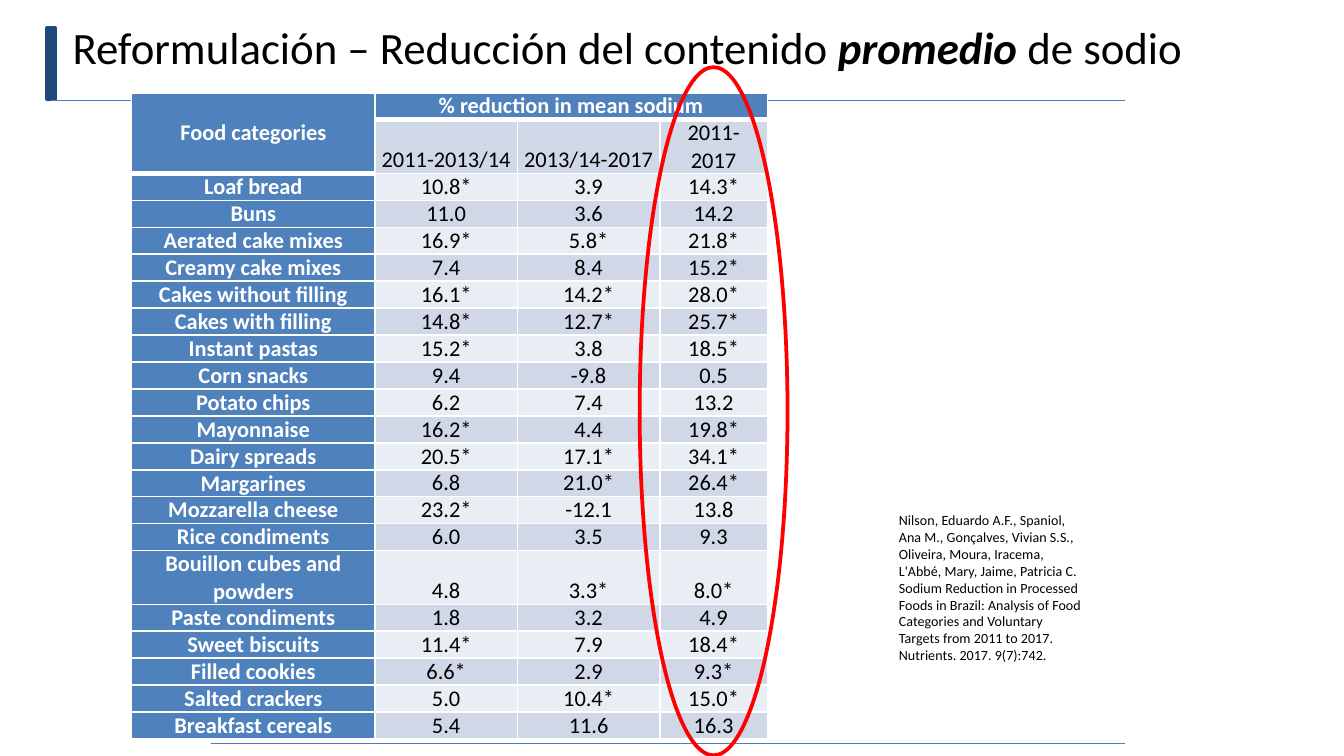
from lxml import etree
from pptx import Presentation
from pptx import util as u
from pptx.dml.color import RGBColor
from pptx.enum import shapes, text
from pptx.oxml import ns

WIDTH = 10
HEIGHT = WIDTH * 9 / 16
FONT = "Calibri"
BLACK, WHITE, NAVY, RULE, RED = "000000", "FFFFFF", "1F497D", "4B7EBC", "FF0000"
HEADER, BANDS = "4F81BD", ("E9EDF4", "D0D8E8")

TITLE = [
    ("Reformulación – Reducción del contenido ", False),
    ("promedio", True),
    (" de sodio", False),
]
CITATION = (
    "Nilson, Eduardo A.F., Spaniol, Ana M., Gonçalves, Vivian S.S., Oliveira, Moura, "
    "Iracema, L'Abbé, Mary, Jaime, Patricia C. Sodium Reduction in Processed Foods in "
    "Brazil: Analysis of Food Categories and Voluntary Targets from 2011 to 2017. "
    "Nutrients. 2017. 9(7):742."
)
ROWS = [
    ("Food categories", "% reduction in mean sodium", "", ""),
    ("", "2011-2013/14", "2013/14-2017", "2011-2017"),
    ("Loaf bread", "10.8*", "3.9", "14.3*"),
    ("Buns", "11.0", "3.6", "14.2"),
    ("Aerated cake mixes", "16.9*", "5.8*", "21.8*"),
    ("Creamy cake mixes", "7.4", "8.4", "15.2*"),
    ("Cakes without filling", "16.1*", "14.2*", "28.0*"),
    ("Cakes with filling", "14.8*", "12.7*", "25.7*"),
    ("Instant pastas", "15.2*", "3.8", "18.5*"),
    ("Corn snacks", "9.4", "-9.8", "0.5"),
    ("Potato chips", "6.2", "7.4", "13.2"),
    ("Mayonnaise", "16.2*", "4.4", "19.8*"),
    ("Dairy spreads", "20.5*", "17.1*", "34.1*"),
    ("Margarines", "6.8", "21.0*", "26.4*"),
    ("Mozzarella cheese", "23.2*", "-12.1", "13.8"),
    ("Rice condiments", "6.0", "3.5", "9.3"),
    ("Bouillon cubes and powders", "4.8", "3.3*", "8.0*"),
    ("Paste condiments", "1.8", "3.2", "4.9"),
    ("Sweet biscuits", "11.4*", "7.9", "18.4*"),
    ("Filled cookies", "6.6*", "2.9", "9.3*"),
    ("Salted crackers", "5.0", "10.4*", "15.0*"),
    ("Breakfast cereals", "5.4", "11.6", "16.3"),
]
COLUMNS = (1.81, 1.06, 1.06, 0.8)
ROW_HEIGHT = 0.19
TABLE_LEFT, TABLE_TOP = 0.98, 0.69
RULE_END = 8.37
RULES = [(0.38, 0.75), (1.57, 5.53)]


def color(value):
    return RGBColor.from_string(value)


def box(*lengths):
    return [u.Inches(length) for length in lengths]


def add_run(paragraph, words, size, fill=BLACK, bold=False, italic=False):
    run = paragraph.add_run()
    run.text = words
    run.font.name, run.font.size = FONT, u.Pt(size)
    run.font.bold, run.font.italic = bold, italic
    run.font.color.rgb = color(fill)


def add_rule(slide, left, top):
    rule = slide.shapes.add_connector(
        shapes.MSO_CONNECTOR.STRAIGHT, *box(left, top, RULE_END, top))
    rule.line.color.rgb, rule.line.width = color(RULE), u.Pt(0.75)
    etree.SubElement(rule._element.spPr, ns.qn("a:effectLst"))


def add_outlined(slide, kind, place, line, fill=None):
    shape = slide.shapes.add_shape(kind, *box(*place))
    shape.shadow.inherit = False
    if fill:
        shape.fill.solid()
        shape.fill.fore_color.rgb = color(fill)
    else:
        shape.fill.background()
    shape.line.color.rgb, shape.line.width = color(line), u.Pt(2)


def set_borders(cell, bottom):
    properties = cell._tc.get_or_add_tcPr()
    sides = {"lnL": 1, "lnR": 1, "lnT": 1, "lnB": bottom}
    for index, (side, points) in enumerate(sides.items()):
        line = etree.Element(ns.qn(f"a:{side}"), w=str(u.Pt(points)))
        fill = etree.SubElement(line, ns.qn("a:solidFill"))
        etree.SubElement(fill, ns.qn("a:srgbClr"), val=WHITE)
        properties.insert(index, line)


def format_cell(cell, words, row, column):
    heading = row == 0 or column == 0
    cell.fill.solid()
    cell.fill.fore_color.rgb = color(HEADER if heading else BANDS[row % 2])
    cell.margin_left = cell.margin_right = u.Inches(0.04)
    cell.margin_top = cell.margin_bottom = 0
    anchors = text.MSO_ANCHOR
    cell.vertical_anchor = anchors.BOTTOM if column else anchors.MIDDLE
    set_borders(cell, 3 if row == 0 or (row, column) == (1, 0) else 1)
    if words:
        paragraph = cell.text_frame.paragraphs[0]
        paragraph.alignment = text.PP_ALIGN.CENTER
        add_run(paragraph, words, 12, WHITE if heading else BLACK, heading)


def add_reduction_table(slide):
    place = box(TABLE_LEFT, TABLE_TOP, sum(COLUMNS), ROW_HEIGHT * len(ROWS))
    table = slide.shapes.add_table(len(ROWS), len(COLUMNS), *place).table
    for column, width in zip(table.columns, COLUMNS):
        column.width = u.Inches(width)
    for row, values in enumerate(ROWS):
        table.rows[row].height = u.Inches(ROW_HEIGHT)
        for column, words in enumerate(values):
            format_cell(table.cell(row, column), words, row, column)
    table.cell(0, 0).merge(table.cell(1, 0))
    table.cell(0, 1).merge(table.cell(0, 3))


def add_title(slide):
    title = slide.shapes.title
    title.left, title.top, title.width, title.height = box(0.44, 0.1, 9.46, 0.5)
    frame = title.text_frame
    frame.vertical_anchor = text.MSO_ANCHOR.TOP
    frame.auto_size, frame.word_wrap = text.MSO_AUTO_SIZE.NONE, True
    paragraph = frame.paragraphs[0]
    paragraph.alignment = text.PP_ALIGN.LEFT
    for words, strong in TITLE:
        add_run(paragraph, words, 24, bold=strong, italic=strong)


def add_citation(slide):
    frame = slide.shapes.add_textbox(*box(6.59, 3.76, 1.56, 1.24)).text_frame
    frame.word_wrap = True
    add_run(frame.paragraphs[0], CITATION, 7.5)


def main():
    """Build the sodium reduction slide."""
    presentation = Presentation()
    presentation.slide_width, presentation.slide_height = box(WIDTH, HEIGHT)
    slide = presentation.slides.add_slide(presentation.slide_layouts[5])
    add_title(slide)
    add_citation(slide)
    add_outlined(slide, shapes.MSO_SHAPE.RECTANGLE, (0.35, 0.21, 0.06, 0.53), NAVY, NAVY)
    for left, top in RULES:
        add_rule(slide, left, top)
    add_reduction_table(slide)
    add_outlined(slide, shapes.MSO_SHAPE.OVAL, (4.76, 0.5, 1.1, 5.12), RED)
    presentation.save("out.pptx")


if __name__ == "__main__":
    main()
